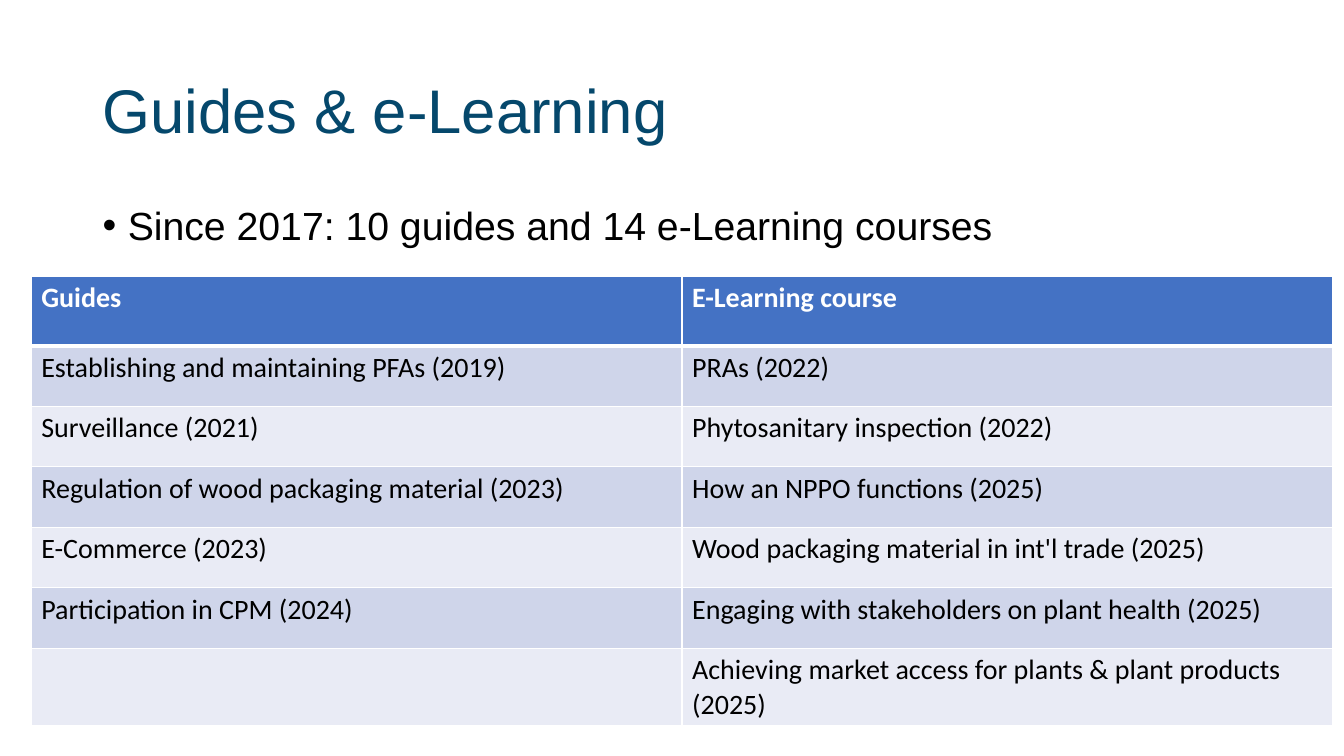
"""Build the Guides & e-Learning slide."""
import pptx
import pptx.dml.color
import pptx.enum.text
import pptx.oxml
import pptx.oxml.ns
import pptx.util

WIDTH, HEIGHT = 13.33, 7.5
MARGIN, TEXT_WIDTH = 0.92, 11.5
HEADER_FILL, BANDS = "4472C4", ("CFD5EA", "E9EBF5")
COURSES = [
    ("Guides", "E-Learning course"),
    ("Establishing and maintaining PFAs (2019)", "PRAs (2022)"),
    ("Surveillance (2021)", "Phytosanitary inspection (2022)"),
    ("Regulation of wood packaging material (2023)", "How an NPPO functions (2025)"),
    ("E-Commerce (2023)", "Wood packaging material in int'l trade (2025)"),
    ("Participation in CPM (2024)", "Engaging with stakeholders on plant health (2025)"),
    ("", "Achieving market access for plants & plant products (2025)"),
]


def color(hex_text):
    """Return the colour for a hex string."""
    return pptx.dml.color.RGBColor.from_string(hex_text)


def inches(*lengths):
    """Convert lengths in inches."""
    return [pptx.util.Inches(n) for n in lengths]


def style_font(font, hex_text, **formats):
    """Set the colour and the given attributes of a font."""
    for name, value in formats.items():
        setattr(font, name, value)
    font.color.rgb = color(hex_text)


def add_bullet(p, indent):
    """Give a paragraph a hanging round bullet."""
    pPr = p._p.get_or_add_pPr()
    pPr.set("marL", str(pptx.util.Inches(indent)))
    pPr.set("indent", str(-pptx.util.Inches(indent)))
    for tag, attribute in (("buFont", 'typeface="Arial"'), ("buChar", 'char="•"')):
        pPr.append(pptx.oxml.parse_xml(
            f'<a:{tag} {pptx.oxml.ns.nsdecls("a")} {attribute}/>'))


def add_text(s, text, top, height, size, hex_text, anchor, bullet=False):
    """Add a text box across the text column."""
    sp = s.shapes.add_textbox(*inches(MARGIN, top, TEXT_WIDTH, height))
    tf = sp.text_frame
    tf.word_wrap = True
    tf.vertical_anchor = anchor
    p = tf.paragraphs[0]
    p.line_spacing = 0.9
    if bullet:
        add_bullet(p, 0.25)
    r = p.add_run()
    r.text = text
    style_font(r.font, hex_text, name="Arial", size=pptx.util.Pt(size))


def add_borders(cell, bottom):
    """Draw white cell borders, with the bottom one in its own width."""
    tcPr = cell._tc.get_or_add_tcPr()
    for side, width in (("L", 1), ("R", 1), ("T", 1), ("B", bottom)):
        tcPr.append(pptx.oxml.parse_xml(
            f'<a:ln{side} {pptx.oxml.ns.nsdecls("a")} w="{pptx.util.Pt(width)}">'
            f'<a:solidFill><a:srgbClr val="FFFFFF"/></a:solidFill></a:ln{side}>'))


def fill_cell(cell, text, row):
    """Write and format one cell by its row."""
    header = row == 0
    add_borders(cell, 3 if header else 1)
    cell.fill.solid()
    cell.fill.fore_color.rgb = color(HEADER_FILL if header else BANDS[(row - 1) % 2])
    if text:
        r = cell.text_frame.paragraphs[0].add_run()
        r.text = text
        style_font(r.font, "FFFFFF" if header else "000000",
                   name="Calibri", size=pptx.util.Pt(20), bold=header)


def add_courses(s, left, top, width, heights):
    """Add the table of guides and courses."""
    box = inches(left, top, width, sum(heights))
    table = s.shapes.add_table(len(COURSES), len(COURSES[0]), *box).table
    for row, (texts, height) in enumerate(zip(COURSES, heights)):
        table.rows[row].height = pptx.util.Inches(height)
        for column, text in enumerate(texts):
            fill_cell(table.cell(row, column), text, row)


def main():
    """Build and save the slide."""
    prs = pptx.Presentation()
    prs.slide_width, prs.slide_height = inches(WIDTH, HEIGHT)
    s = prs.slides.add_slide(prs.slide_layouts[6])
    anchors = pptx.enum.text.MSO_ANCHOR
    add_text(s, "Guides & e-Learning", 0.4, 1.45, 44, "05486C", anchors.MIDDLE)
    add_text(s, "Since 2017: 10 guides and 14 e-Learning courses",
             2, 4.76, 28, "000000", anchors.TOP, bullet=True)
    add_courses(s, 0.31, 2.74, 12.91, [0.69] + [0.6] * 5 + [0.71])
    prs.save("out.pptx")


if __name__ == "__main__":
    main()
